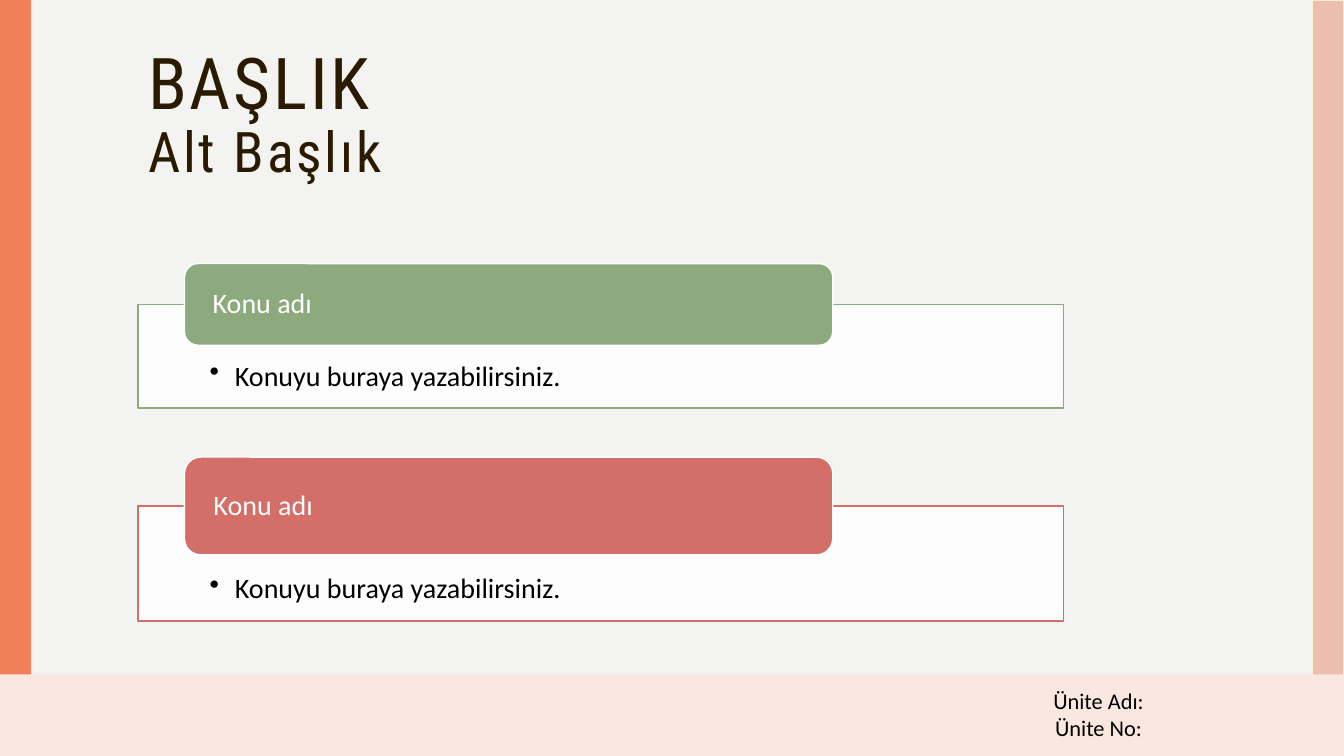
from lxml import etree
from pptx import Presentation
from pptx.dml.color import RGBColor
from pptx.enum.shapes import MSO_SHAPE
from pptx.enum.text import MSO_ANCHOR, MSO_AUTO_SIZE, PP_ALIGN
from pptx.oxml.ns import qn
from pptx.util import Inches, Pt

RECT, ROUNDED = MSO_SHAPE.RECTANGLE, MSO_SHAPE.ROUNDED_RECTANGLE
TOP, MIDDLE = MSO_ANCHOR.TOP, MSO_ANCHOR.MIDDLE
LEFT, CENTER = PP_ALIGN.LEFT, PP_ALIGN.CENTER
COLORS = {
    "background": "F3F3F2", "orange": "F08058", "pink": "EDBDAF",
    "cream": "FEF0D3", "footer": "FAE8E0", "title": "2A1A00",
    "green": "8CAA7E", "red": "D36F68", "white": "FFFFFF", "black": "000000",
}

deck = Presentation()
deck.slide_width, deck.slide_height = Inches(13.33), Inches(7.5)
page = deck.slides.add_slide(deck.slide_layouts[5])
page.background.fill.solid()
page.background.fill.fore_color.rgb = RGBColor.from_string(COLORS["background"])


def add_panel(kind, left, top, width, height, fill, line=None):
    panel = page.shapes.add_shape(
        kind, Inches(left), Inches(top), Inches(width), Inches(height))
    panel.shadow.inherit = False
    panel.fill.solid()
    panel.fill.fore_color.rgb = RGBColor.from_string(COLORS[fill])
    if line:
        panel.line.color.rgb = RGBColor.from_string(COLORS[line])
        panel.line.width = Pt(1)
    else:
        panel.line.fill.background()
    return panel


def add_span(para, text, size, color, font="Calibri"):
    span = para.add_run()
    span.text = text
    span.font.size = Pt(size)
    span.font.name = font
    span.font.color.rgb = RGBColor.from_string(COLORS[color])
    return span


# Side bars and footer band
add_panel(RECT, 0, 0, 0.31, 7.5, "orange")
add_panel(RECT, 13.02, 0, 0.31, 7.5, "pink", "cream")
add_panel(RECT, 0, 6.69, 13.33, 0.81, "footer")

# Unit details in the footer
unit_box = page.shapes.add_textbox(Inches(9.89), Inches(6.77), Inches(2.01), Inches(0.64))
unit_box.text_frame.word_wrap = True
for index, label in enumerate(("Ünite Adı:", "Ünite No:")):
    para = unit_box.text_frame.paragraphs[0] if index == 0 else unit_box.text_frame.add_paragraph()
    para.alignment = CENTER
    add_span(para, label, 16, "black")

# Topic cards: a bordered body with a heading tab centred on its top edge
topics = [("green", 3.02, 1.03, 0.81, 0.57), ("red", 5.02, 1.14, 0.97, 0.68)]
for color, top, height, tab_height, text_inset in topics:
    body = add_panel(RECT, 1.37, top, 9.18, height, "white", color)
    body_color = body.fill._xPr.find(qn("a:solidFill"))[0]
    etree.SubElement(body_color, qn("a:alpha"), val="90000")
    tab = add_panel(ROUNDED, 1.83, top - tab_height / 2, 6.43, tab_height, color, "white")

    cards = [
        (body, "Konuyu buraya yazabilirsiniz.", "black", TOP, (0.71, text_inset, 0.16)),
        (tab, "Konu adı", "white", MIDDLE, (0.24, 0, 0)),
    ]
    for shape, text, text_color, anchor, (side, above, below) in cards:
        frame = shape.text_frame
        frame.word_wrap = True
        frame.vertical_anchor = anchor
        frame.margin_left = frame.margin_right = Inches(side)
        frame.margin_top, frame.margin_bottom = Inches(above), Inches(below)
        para = frame.paragraphs[0]
        para.alignment = LEFT
        para.line_spacing = 0.9
        if shape is body:
            para.level = 1
            settings = para._p.get_or_add_pPr()
            settings.set("marL", str(Inches(0.25)))
            settings.set("indent", str(Inches(-0.25)))
            etree.SubElement(settings, qn("a:buChar"), char="•")
        add_span(para, text, 20, text_color)

# Title and subtitle
title = page.shapes.title
title.left, title.top = Inches(1.37), Inches(0.42)
title.width, title.height = Inches(11.13), Inches(1.63)
title.text_frame.word_wrap = True
title.text_frame.auto_size = MSO_AUTO_SIZE.NONE
title.text_frame.vertical_anchor = TOP
para = title.text_frame.paragraphs[0]
para.alignment = LEFT
para.line_spacing = 0.9
heading = add_span(para, "BAŞLIK", 51, "title", "Roboto Condensed")
para.add_line_break()
subheading = add_span(para, "Alt Başlık", 40, "title", "Roboto Condensed")
for span in (heading, subheading):
    span.font._element.set("spc", "200")

deck.save("out.pptx")
